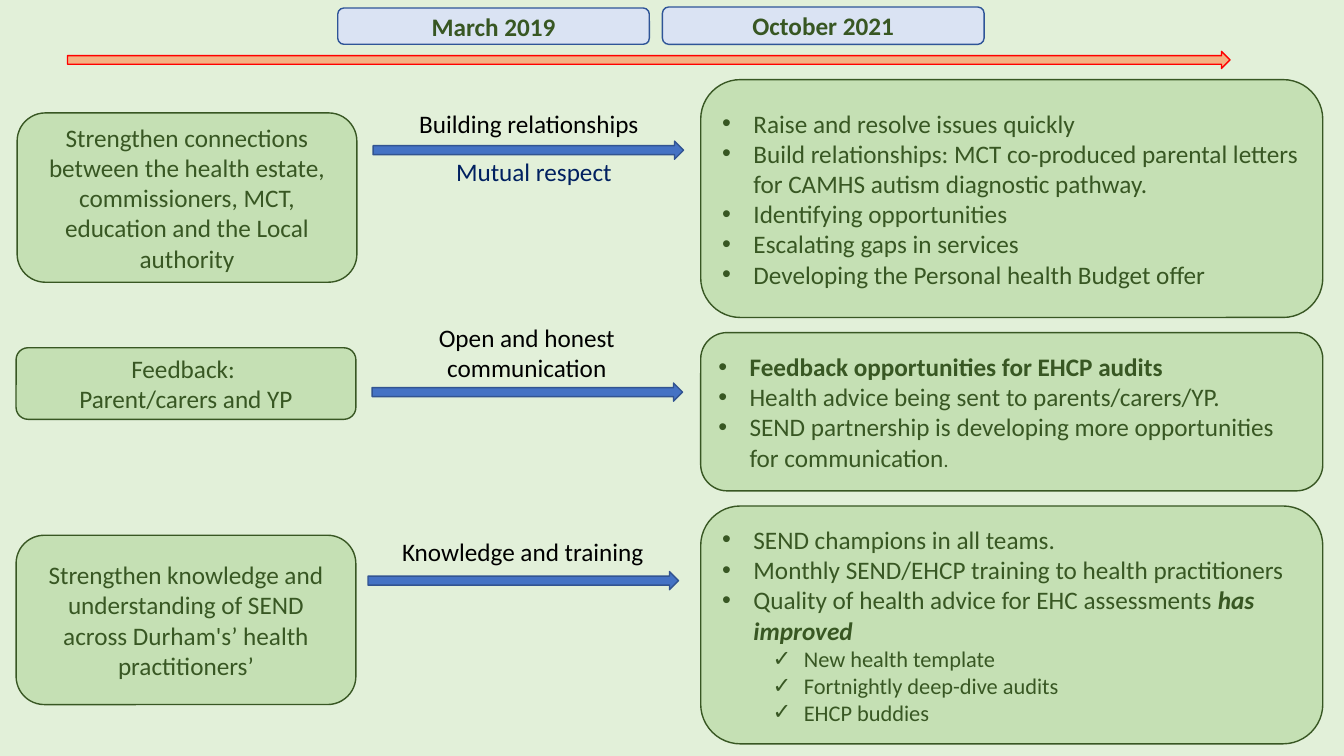
from lxml.etree import SubElement
from pptx import Presentation
from pptx.dml.color import RGBColor
from pptx.enum.shapes import MSO_SHAPE
from pptx.enum.text import MSO_ANCHOR, PP_ALIGN
from pptx.oxml.ns import qn
from pptx.util import Inches, Pt

PALE_GREEN = RGBColor(0xE2, 0xF0, 0xD9)
GREEN = RGBColor(0xC5, 0xE0, 0xB4)
DARK_GREEN = RGBColor(0x38, 0x57, 0x23)
PALE_BLUE = RGBColor(0xDA, 0xE3, 0xF3)
MID_BLUE = RGBColor(0x2F, 0x55, 0x97)
BLUE = RGBColor(0x44, 0x72, 0xC4)
ARROW_EDGE = RGBColor(0x32, 0x54, 0x91)
NAVY = RGBColor(0x00, 0x20, 0x60)
ORANGE = RGBColor(0xF4, 0xB1, 0x83)
RED = RGBColor(0xFF, 0x00, 0x00)
BLACK = RGBColor(0x00, 0x00, 0x00)

BOLD = {"bold": True}
BOLD_ITALIC = {"bold": True, "italic": True}
SMALL = {"size": Pt(14)}
TICKED = {"size": Pt(16)}

DATES = [
    ("March 2019", (3.35, 0.08, 3.09, 0.36)),
    ("October 2021", (6.57, 0.07, 3.19, 0.37)),
]

AIMS = [
    (["Strengthen connections between the health estate, commissioners, MCT, "
      "education and the Local authority"], (0.17, 1.12, 3.37, 1.68)),
    (["Feedback: ", "Parent/carers and YP"], (0.16, 3.45, 3.37, 0.71)),
    (["Strengthen knowledge and understanding of SEND across Durham's’ health "
      "practitioners’"], (0.16, 5.31, 3.37, 1.68)),
]

ARROWS = [(3.7, 1.4), (3.69, 3.8), (3.65, 5.67)]

LABELS = [
    ("Building relationships", (3.85, 1.03, 2.79, 0.4), BLACK),
    ("Mutual respect", (4.37, 1.5, 1.85, 0.4), NAVY),
    ("Open and honest communication", (3.83, 3.15, 2.79, 0.71), BLACK),
    ("Knowledge and training", (3.79, 5.27, 2.79, 0.4), BLACK),
]

# Each outcome box: top, height, then (level, spans) for every bullet.
OUTCOMES = [
    (0.79, 2.36, [
        (0, [("Raise and resolve issues quickly", {})]),
        (0, [("Build relationships: MCT co-produced parental letters "
              "for CAMHS autism diagnostic pathway.", {})]),
        (0, [("Identifying opportunities", {})]),
        (0, [("Escalating gaps in services", {})]),
        (0, [("Developing the Personal health Budget offer", {})]),
    ]),
    (3.3, 1.57, [
        (0, [("Feedback opportunities for EHCP audits", BOLD)]),
        (0, [("Health advice being sent to parents/carers/YP.", {})]),
        (0, [("SEND partnership is developing more opportunities "
              "for communication", {}), (".", SMALL)]),
    ]),
    (5.02, 2.36, [
        (0, [("SEND champions in all teams.", {})]),
        (0, [("Monthly SEND/EHCP training to health practitioners", {})]),
        (0, [("Quality of health advice for EHC assessments ", {}),
             ("has improved", BOLD_ITALIC)]),
        (1, [("New health template", TICKED)]),
        (1, [("Fortnightly deep-dive audits", TICKED)]),
        (1, [("EHCP buddies", TICKED)]),
    ]),
]


class Board:
    text_format = {"name": "Calibri", "size": Pt(18), "bold": False, "italic": False}
    bullets = ["•", "✓"]
    hanging = 0.31
    level_step = 0.5

    def __init__(self, slide):
        self.slide = slide
        slide.background.fill.solid()
        slide.background.fill.fore_color.rgb = PALE_GREEN

    def shape(self, kind, place, fill, line):
        shape = self.slide.shapes.add_shape(kind, *map(Inches, place))
        shape.shadow.inherit = False
        shape.fill.solid()
        shape.fill.fore_color.rgb = fill
        shape.line.color.rgb = line
        shape.line.width = Pt(1)
        return shape

    def arrow(self, place, fill, line):
        self.shape(MSO_SHAPE.RIGHT_ARROW, place, fill, line)

    def box(self, place, paragraphs, fill=GREEN, line=DARK_GREEN, bulleted=False):
        """Rounded box holding (level, spans) paragraphs, centred unless bulleted."""
        box = self.shape(MSO_SHAPE.ROUNDED_RECTANGLE, place, fill, line)
        box.text_frame.vertical_anchor = MSO_ANCHOR.MIDDLE
        self.fill_text(box.text_frame, paragraphs, DARK_GREEN, bulleted)

    def label(self, place, text, color):
        box = self.slide.shapes.add_textbox(*map(Inches, place))
        self.fill_text(box.text_frame, [(0, [(text, {})])], color)

    def fill_text(self, frame, paragraphs, color, bulleted=False):
        frame.word_wrap = True
        for index, (level, spans) in enumerate(paragraphs):
            para = frame.add_paragraph() if index else frame.paragraphs[0]
            para.level = level
            para.alignment = PP_ALIGN.LEFT if bulleted else PP_ALIGN.CENTER
            if bulleted:
                self.add_bullet(para, level)
            for text, changes in spans:
                span = para.add_run()
                span.text = text
                span.font.color.rgb = color
                for name, value in {**self.text_format, **changes}.items():
                    setattr(span.font, name, value)

    def add_bullet(self, para, level):
        properties = para._p.get_or_add_pPr()
        indent = self.hanging + level * self.level_step
        properties.set("marL", str(Inches(indent)))
        properties.set("indent", str(-Inches(self.hanging)))
        SubElement(properties, qn("a:buFont"), typeface="Arial")
        SubElement(properties, qn("a:buChar"), char=self.bullets[level])


def main():
    deck = Presentation()
    deck.slide_width, deck.slide_height = Inches(13.33), Inches(7.5)
    board = Board(deck.slides.add_slide(deck.slide_layouts[6]))

    for date, place in DATES:
        board.box(place, [(0, [(date, BOLD)])], PALE_BLUE, MID_BLUE)
    board.arrow((0.67, 0.51, 11.53, 0.17), ORANGE, RED)
    for lines, place in AIMS:
        board.box(place, [(0, [(line, {})]) for line in lines])
    for top, height, paragraphs in OUTCOMES:
        board.box((6.95, top, 6.17, height), paragraphs, bulleted=True)
    for left, top in ARROWS:
        board.arrow((left, top, 3.08, 0.18), BLUE, ARROW_EDGE)
    for text, place, color in LABELS:
        board.label(place, text, color)

    deck.save("out.pptx")


if __name__ == "__main__":
    main()
